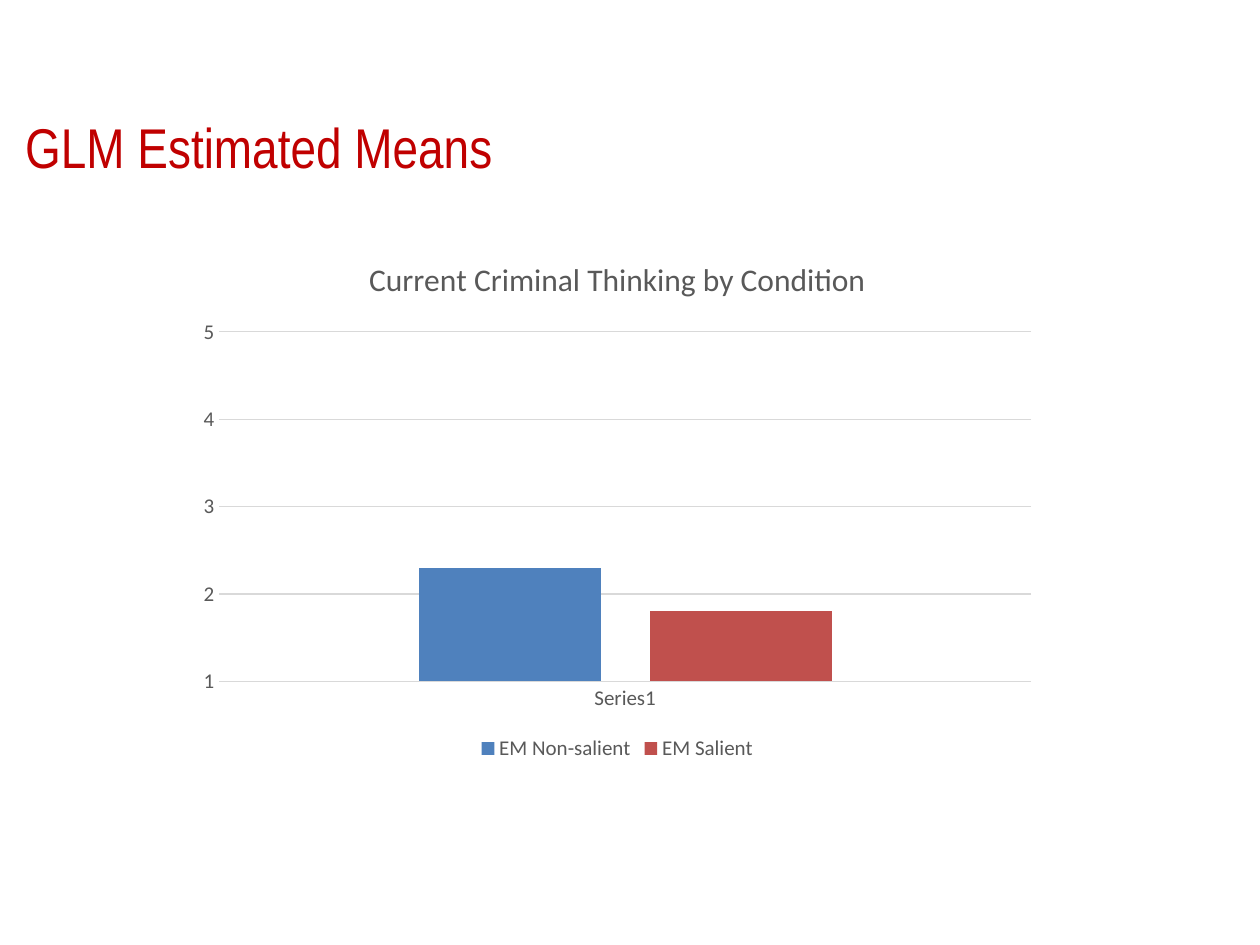
"""Build the slide of GLM estimated means with its clustered column chart."""
from pptx import Presentation
from pptx.chart.data import CategoryChartData
from pptx.dml.color import RGBColor
from pptx.enum.chart import XL_CHART_TYPE as ChartType
from pptx.enum.chart import XL_LEGEND_POSITION as LegendPosition
from pptx.enum.chart import XL_TICK_MARK as TickMark
from pptx.enum.text import MSO_ANCHOR as Anchor
from pptx.enum.text import PP_ALIGN as Align
from pptx.util import Inches, Pt

TITLE = "GLM Estimated Means"
CHART_TITLE = "Current Criminal Thinking by Condition"
CATEGORIES = ["Series1"]
CONDITIONS = [("EM Non-salient", 2.3, "4F81BD"), ("EM Salient", 1.8, "C0504D")]
SCALE = {"minimum_scale": 1, "maximum_scale": 5, "major_unit": 1}
TITLE_AREA = (0, 0.69, 7.77, 0.94)
CHART_AREA = (1.48, 1.86, 6.84, 4.22)
THEME = {
    "title": ("Arial Narrow", 32, "C00000"),
    "chart_title": ("Calibri", 18, "595959"),
    "label": ("Calibri", 12, "595959"),
    "rule": "D9D9D9",
}


def style_font(font, role):
    name, size, color = THEME[role]
    font.name, font.size, font.bold = name, Pt(size), False
    font.color.rgb = RGBColor.from_string(color)


def style_rule(line):
    line.color.rgb = RGBColor.from_string(THEME["rule"])
    line.width = Pt(0.75)


def add_title(slide):
    title = slide.shapes.title
    title.left, title.top, title.width, title.height = map(Inches, TITLE_AREA)
    frame = title.text_frame
    frame.text = TITLE
    frame.word_wrap = True
    frame.vertical_anchor = Anchor.MIDDLE
    para = frame.paragraphs[0]
    para.alignment = Align.LEFT
    para._p.get_or_add_pPr().set("marL", str(Inches(0.1)))
    style_font(para.font, "title")


def add_means_chart(slide):
    data = CategoryChartData()
    data.categories = CATEGORIES
    for name, mean, _ in CONDITIONS:
        data.add_series(name, [mean])
    chart = slide.shapes.add_chart(
        ChartType.COLUMN_CLUSTERED, *map(Inches, CHART_AREA), data
    ).chart
    style_font(chart.font, "label")

    chart.has_title = True
    frame = chart.chart_title.text_frame
    frame.text = CHART_TITLE
    style_font(frame.paragraphs[0].font, "chart_title")
    chart.chart_title.include_in_layout = False

    chart.has_legend = True
    chart.legend.position = LegendPosition.BOTTOM
    chart.legend.include_in_layout = False
    style_font(chart.legend.font, "label")

    for axis in (chart.category_axis, chart.value_axis):
        axis.major_tick_mark = axis.minor_tick_mark = TickMark.NONE
        style_font(axis.tick_labels.font, "label")
    style_rule(chart.category_axis.format.line)
    for setting, value in SCALE.items():
        setattr(chart.value_axis, setting, value)
    chart.value_axis.format.line.fill.background()
    style_rule(chart.value_axis.major_gridlines.format.line)

    plot = chart.plots[0]
    plot.gap_width, plot.overlap = 219, -27
    plot.vary_by_categories = False
    for series, (_, _, color) in zip(plot.series, CONDITIONS):
        series.format.fill.solid()
        series.format.fill.fore_color.rgb = RGBColor.from_string(color)


def main():
    deck = Presentation()
    deck.slide_width, deck.slide_height = Inches(10), Inches(7.5)
    slide = deck.slides.add_slide(deck.slide_layouts[5])
    add_title(slide)
    add_means_chart(slide)
    deck.save("out.pptx")


if __name__ == "__main__":
    main()
